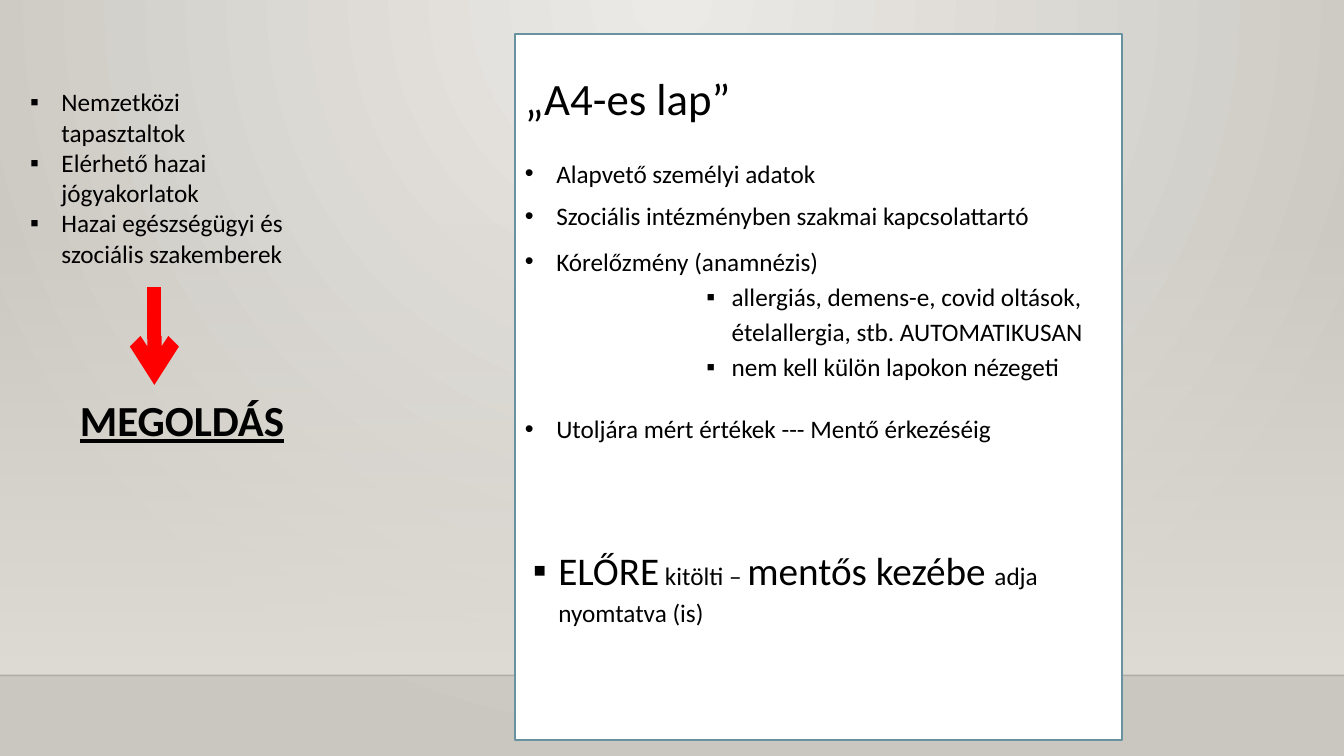
from lxml import etree
from pptx import Presentation
from pptx import util as u
from pptx.dml.color import RGBColor
from pptx.enum import shapes, text
from pptx.oxml.ns import qn

COLORS = {
    "ink": "000000", "paper": "FFFFFF", "border": "6892A0", "arrow": "FF0000",
    "center": "ECEAE7", "edge": "CAC7C1", "wall": "DFDBD5", "floor_line": "000001",
}
WIDTH, HEIGHT = 33.87, 19.05


def color(name):
    return RGBColor.from_string(COLORS[name])


def add_xml(parent, tag, **attributes):
    return etree.SubElement(parent, qn(tag), attributes)


class SlideBuilder:
    """Holds the text style and the page being filled."""

    def __init__(self, page, font="Calibri", size=18):
        self.page, self.font, self.size = page, font, size

    def gradient(self, fill, first, last):
        fill.gradient()
        for stop, name in zip(fill.gradient_stops, (first, last)):
            stop.color.rgb = color(name)

    def background(self):
        fill = self.page.background.fill
        self.gradient(fill, "center", "edge")
        properties = self.page.background._cSld.find(".//" + qn("a:gradFill"))
        properties.remove(properties.find(qn("a:lin")))
        circle = add_xml(properties, "a:path", path="circle")
        add_xml(circle, "a:fillToRect", l="43000", t="0", r="43000", b="100000")

    def rectangle(self, left, top, width, height):
        shape = self.page.shapes.add_shape(
            shapes.MSO_SHAPE.RECTANGLE, *map(u.Cm, (left, top, width, height)))
        shape.shadow.inherit = False
        return shape

    def wall(self, top, height):
        band = self.rectangle(0, top, WIDTH, height)
        band.line.fill.background()
        self.gradient(band.fill, "wall", "wall")
        band.fill.gradient_angle = 270
        first = band._element.spPr.find(".//" + qn("a:srgbClr"))
        add_xml(first, "a:alpha", val="0")

    def sheet(self, left, top, width, height):
        paper = self.rectangle(left, top, width, height)
        paper.fill.solid()
        paper.fill.fore_color.rgb = color("paper")
        paper.line.color.rgb = color("border")
        paper.line.width = u.Pt(1.25)

    def line(self, start, end, name, width, opacity=None, head=None):
        connector = self.page.shapes.add_connector(
            shapes.MSO_CONNECTOR.STRAIGHT, *map(u.Cm, start + end))
        connector.line.color.rgb = color(name)
        connector.line.width = u.Pt(width)
        properties = connector._element.spPr
        if opacity:
            add_xml(properties.find(".//" + qn("a:srgbClr")), "a:alpha", val=str(opacity * 1000))
        if head:
            add_xml(properties.find(qn("a:ln")), "a:tailEnd", type=head)
        add_xml(properties, "a:effectLst")

    def text(self, place, paragraphs, bullet=None, indent=(0.79, 0.79), wrap=True,
             spacing=None, after=0, align=None, anchor=None, **emphasis):
        """Each paragraph is a list of (words, size) spans; `after` follows the last one."""
        box = self.page.shapes.add_textbox(*map(u.Cm, place))
        frame = box.text_frame
        frame.word_wrap = wrap
        if anchor is not None:
            frame.vertical_anchor = anchor
        else:
            frame.auto_size = text.MSO_AUTO_SIZE.SHAPE_TO_FIT_TEXT
        for index, spans in enumerate(paragraphs):
            para = frame.paragraphs[0] if index == 0 else frame.add_paragraph()
            para.alignment = align
            para.line_spacing = spacing
            if after and index == len(paragraphs) - 1:
                para.space_after = u.Pt(after)
            if bullet:
                properties = para._p.get_or_add_pPr()
                properties.set("marL", str(u.Cm(indent[0])))
                properties.set("indent", str(-u.Cm(indent[1])))
                add_xml(properties, "a:buFont", typeface="Arial")
                add_xml(properties, "a:buChar", char=bullet)
            for words, size in spans:
                span = para.add_run()
                span.text = words
                span.font.name = self.font
                span.font.size = u.Pt(size or self.size)
                span.font.color.rgb = color("ink")
                for key, value in emphasis.items():
                    setattr(span.font, key, value)


def main():
    deck = Presentation()
    deck.slide_width, deck.slide_height = u.Cm(WIDTH), u.Cm(HEIGHT)
    slide = SlideBuilder(deck.slides.add_slide(deck.slide_layouts[6]))

    # Backdrop and sheet
    slide.background()
    slide.wall(5.61, 11.41)
    slide.line((0, 17.02), (WIDTH, 17.02), "floor_line", 1, opacity=20)
    sheet_left = 12.98
    slide.sheet(sheet_left, 0.86, 15.29, 17.78)

    # Sources leading to the solution
    sources = ["Nemzetközi tapasztaltok", "Elérhető hazai jógyakorlatok",
               "Hazai egészségügyi és szociális szakemberek"]
    slide.text((0.51, 2.06, 7.49, 5.64), [[(words, None)] for words in sources], bullet="▪")
    slide.line((3.89, 7.24), (3.89, 9.7), "arrow", 10, head="arrow")
    slide.text((0.3, 9.9, 7.11, 1.35), [[("MEGOLDÁS", 30.6)]], align=text.PP_ALIGN.RIGHT,
               anchor=text.MSO_ANCHOR.MIDDLE, bold=True, underline=True)

    # Sheet title and main points
    slide.text((sheet_left, 1.65, 5.82, 1.63), [[("„A4-es lap”", 32)]], wrap=False)
    points = [
        (3.86, 7.92, "Alapvető személyi adatok"),
        (4.93, 13.51, "Szociális intézményben szakmai kapcsolattartó"),
        (6.07, 8.15, "Kórelőzmény (anamnézis)"),
        (10.29, 12.6, "Utoljára mért értékek --- Mentő érkezéséig"),
    ]
    for top, width, words in points:
        slide.text((sheet_left, top, width, 1.02), [[(words, None)]], bullet="•", wrap=False)

    # Details and closing statement
    nested = dict(bullet="▪", indent=(3.18, 0.64), spacing=1.15, after=10)
    details = ["allergiás, demens-e, covid oltások, ételallergia, stb. AUTOMATIKUSAN",
               "nem kell külön lapokon nézegeti"]
    slide.text((15.01, 6.86, 14.99, 2.87), [[(words, None)] for words in details], **nested)
    slide.text((10.64, 13.46, 17.98, 2.46),
               [[("ELŐRE", 28), (" kitölti – ", None), ("mentős kezébe ", 28),
                 ("adja nyomtatva (is)", None)]], **nested)

    deck.save("out.pptx")


if __name__ == "__main__":
    main()
